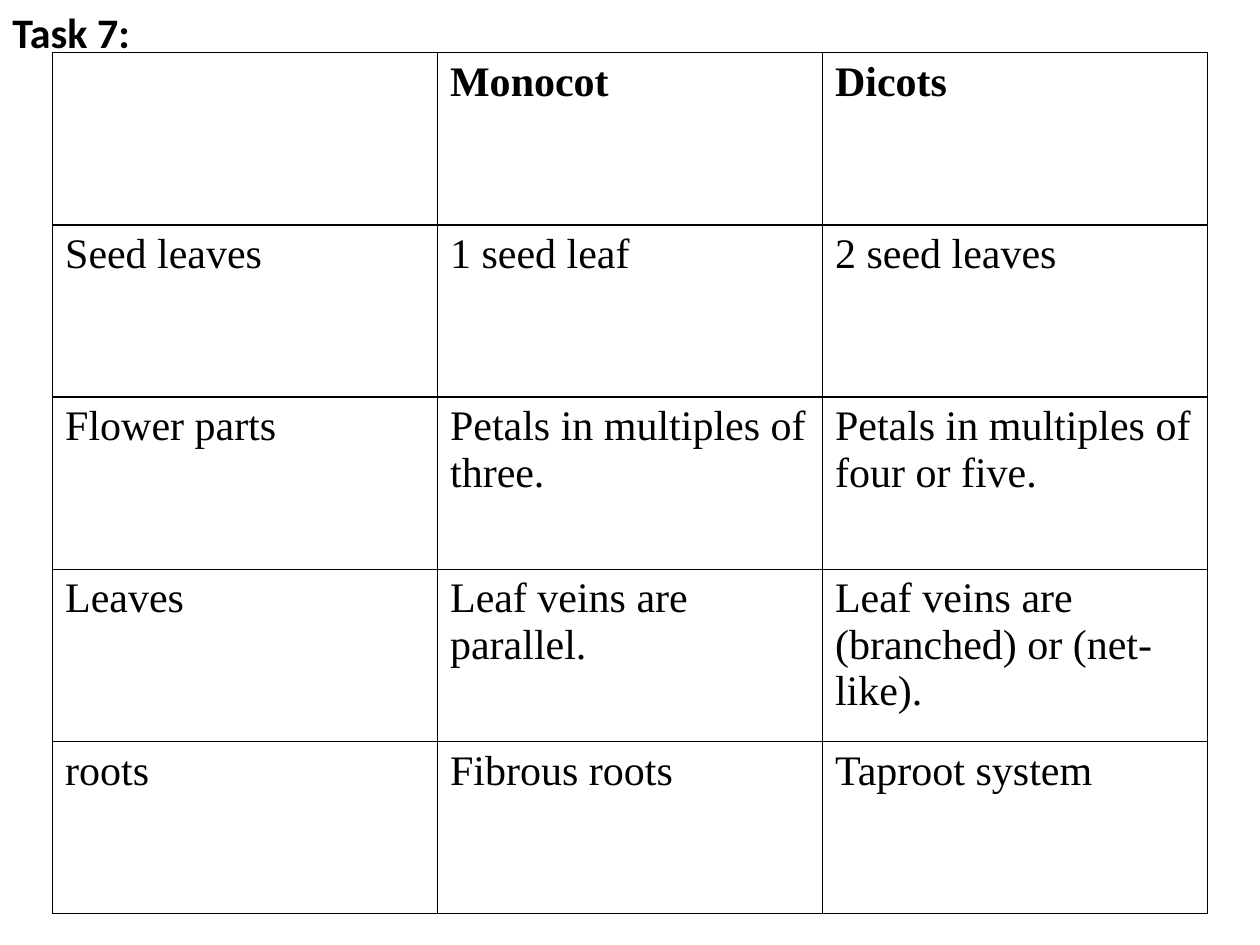
from dataclasses import dataclass

from lxml import etree
from pptx import Presentation
from pptx.dml.color import RGBColor
from pptx.oxml.ns import qn
from pptx.slide import Slide
from pptx.util import Cm, Pt

BORDER_TAGS = ("a:lnL", "a:lnR", "a:lnT", "a:lnB")
ROWS = [
    ("", "Monocot", "Dicots"),
    ("Seed leaves", "1 seed leaf", "2 seed leaves"),
    ("Flower parts", "Petals in multiples of three.", "Petals in multiples of four or five."),
    ("Leaves", "Leaf veins are parallel.", "Leaf veins are (branched) or (net-like)."),
    ("roots", "Fibrous roots", "Taproot system"),
]


def color(value):
    """Turn a hex string into a colour."""
    return RGBColor.from_string(value)


@dataclass
class SlideBuilder:
    """Hold the style and the current slide."""

    slide: Slide
    title_font: str = "Calibri"
    table_font: str = "Times New Roman"
    size: int = 24
    ink: str = "000000"
    border_width: int = 1

    def style(self, paragraph, name, bold):
        """Set the font of a paragraph."""
        font = paragraph.font
        font.name, font.size, font.bold = name, Pt(self.size), bold
        font.color.rgb = color(self.ink)

    def title(self, text, left, top, width, height):
        """Add the heading."""
        frame = self.slide.shapes.add_textbox(Cm(left), Cm(top), Cm(width), Cm(height)).text_frame
        frame.word_wrap = True
        frame.text = text
        self.style(frame.paragraphs[0], self.title_font, True)

    def border(self, cell):
        """Draw a line on each side of a cell."""
        properties = cell._tc.get_or_add_tcPr()
        for tag in BORDER_TAGS:
            line = etree.SubElement(properties, qn(tag), w=str(Pt(self.border_width)))
            fill = etree.SubElement(line, qn("a:solidFill"))
            etree.SubElement(fill, qn("a:srgbClr"), val=self.ink)

    def table(self, rows, left, top, width, height):
        """Add a ruled table with a bold first row."""
        frame = self.slide.shapes.add_table(
            len(rows), len(rows[0]), Cm(left), Cm(top), Cm(width), Cm(height)
        )
        for row_index, row in enumerate(rows):
            for column_index, text in enumerate(row):
                cell = frame.table.cell(row_index, column_index)
                cell.text = text
                self.style(cell.text_frame.paragraphs[0], self.table_font, row_index == 0)
                self.border(cell)
                cell.fill.background()


def main():
    """Build and save the slide."""
    presentation = Presentation()
    presentation.slide_width, presentation.slide_height = Cm(25.4), Cm(19.05)
    builder = SlideBuilder(presentation.slides.add_slide(presentation.slide_layouts[6]))
    builder.title("Task 7:", 0, 0, 25.4, 19.05)
    builder.table(ROWS, 1.06, 1.06, 23.28, 17.36)
    presentation.save("out.pptx")


if __name__ == "__main__":
    main()
